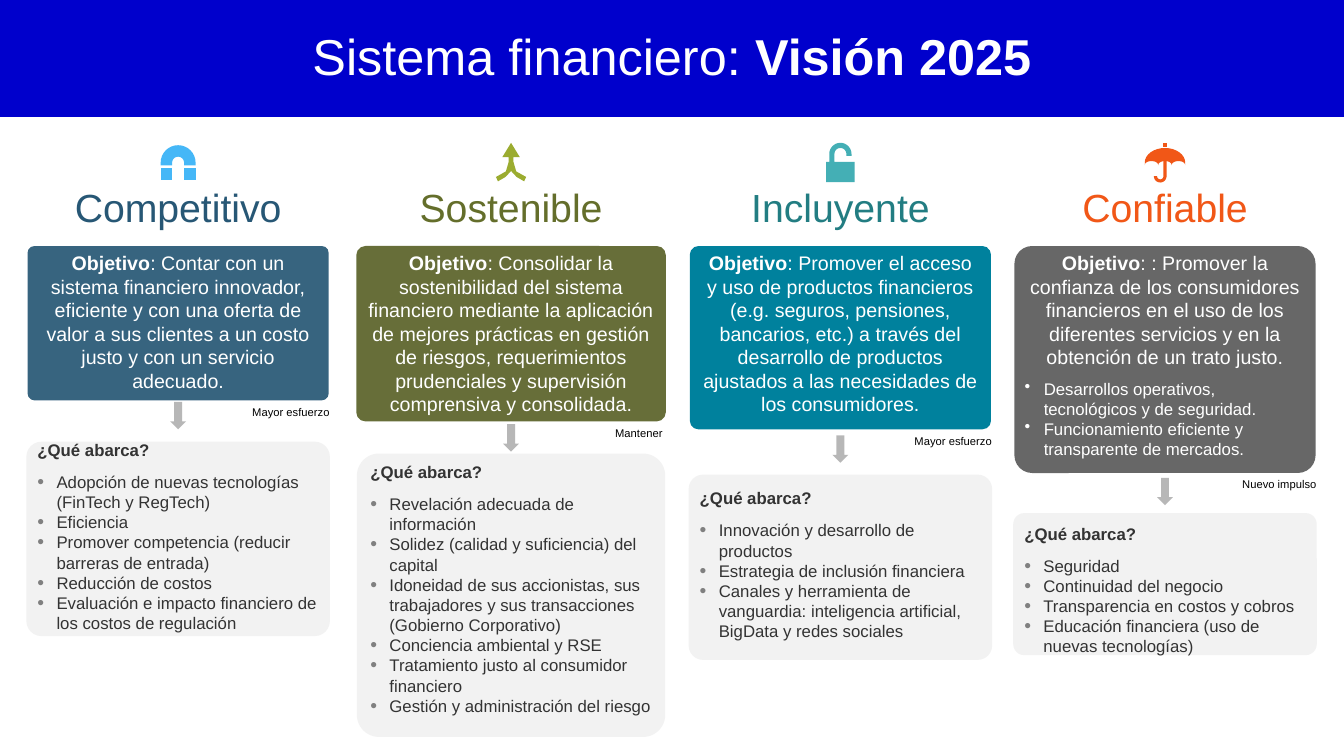
"""Build the slide on the 2025 vision of the financial system."""
from dataclasses import dataclass
from math import cos, radians, sin

from lxml.etree import SubElement
from pptx import Presentation
from pptx.dml.color import RGBColor
from pptx.enum.shapes import MSO_SHAPE as Shape
from pptx.enum.text import MSO_ANCHOR as Anchor, MSO_AUTO_SIZE as AutoSize, PP_ALIGN as Align
from pptx.oxml.ns import qn
from pptx.util import Cm, Pt


@dataclass(frozen=True)
class Theme:
    font: str = "Arial"
    band: str = "0000CC"
    white: str = "FFFFFF"
    panel: str = "F2F2F2"
    arrow: str = "A6A6A6"
    body: str = "333333"
    bullet: str = "808080"
    effort: str = "000000"
    title_pt: int = 36
    heading_pt: int = 28
    goal_pt: int = 14
    list_pt: int = 12
    effort_pt: int = 8


@dataclass(frozen=True)
class Pillar:
    name: str
    center: float
    heading_color: str
    icon_color: str
    icon: list
    card_color: str
    card_opacity: int
    card_width: float
    card_height: float
    card_corner: float
    goal_width: float
    goal: str
    goal_items: list
    arrow_top: float
    effort: str
    panel_top: float
    panel_width: float
    panel_height: float
    list_top: float
    items: list


T = Theme()
CARD_TOP, ICON_TOP = 6.2, 3.6


def arc(cx, cy, rx, ry, start, end, steps=16):
    turn = (end - start) / steps
    angles = [radians(start + turn * i) for i in range(steps + 1)]
    return [(cx + rx * cos(a), cy + ry * sin(a)) for a in angles]


def box(left, top, right, bottom):
    return [(left, top), (right, top), (right, bottom), (left, bottom)]


MAGNET = [
    arc(0, .5, .44, .44, 180, 360) + [(.44, .57), (.15, .57)]
    + arc(0, .5, .15, .15, 360, 180) + [(-.15, .57), (-.44, .57)],
    box(-.44, .64, -.15, .94),
    box(.15, .64, .44, .94),
]
MERGE_RIGHT = [(0, 0), (.22, .36), (.06, .36), (.06, .48), (.13, .72), (.38, .86),
               (.33, .97), (.14, .86), (0, .71)]
MERGE = [MERGE_RIGHT + [(-x, y) for x, y in MERGE_RIGHT[-2:0:-1]]]
PADLOCK = [
    [(.36, .48), (.36, .99), (-.36, .99), (-.36, .48), (-.28, .48)]
    + arc(0, .28, .28, .28, 180, 360) + [(.28, .33), (.15, .33)]
    + arc(0, .28, .15, .15, 360, 180) + [(-.15, .48)],
]
UMBRELLA = [
    arc(0, .5, .51, .37, 180, 360)
    + [point for x in (.34, 0, -.34) for point in arc(x, .56, .17, .1, 360, 180)],
    [(-.04, .46), (.04, .46)] + arc(-.12, .84, .16, .16, 0, 180)
    + arc(-.12, .84, .08, .08, 180, 0),
    box(-.04, 0, .04, .1),
]

PILLARS = [
    Pillar("Competitivo", 4.49, "275775", "45B7F7", MAGNET, "275775", 92, 7.59, 3.89, .045, 7.47,
           ": Contar con un sistema financiero innovador, eficiente y con una oferta de valor "
           "a sus clientes a un costo justo y con un servicio adecuado.", [],
           10.13, "Mayor esfuerzo", 11.13, 7.65, 4.9, 10.95,
           ["Adopción de nuevas tecnologías (FinTech y RegTech)", "Eficiencia",
            "Promover competencia (reducir barreras de entrada)", "Reducción de costos",
            "Evaluación e impacto financiero de los costos de regulación"]),
    Pillar("Sostenible", 12.88, "646E2B", "9BAC30", MERGE, "5C642A", 93, 7.8, 4.42, .052, 7.8,
           ": Consolidar la sostenibilidad del sistema financiero mediante la aplicación de "
           "mejores prácticas en gestión de riesgos, requerimientos prudenciales y "
           "supervisión comprensiva y consolidada.", [],
           10.69, "Mantener", 11.43, 7.77, 7.14, 11.51,
           ["Revelación adecuada de información", "Solidez (calidad y suficiencia) del capital",
            "Idoneidad de sus accionistas, sus trabajadores y sus transacciones "
            "(Gobierno Corporativo)", "Conciencia ambiental y RSE",
            "Tratamiento justo al consumidor financiero",
            "Gestión y administración del riesgo"]),
    Pillar("Incluyente", 21.18, "227D82", "44AFB5", PADLOCK, "00819D", 100, 7.59, 4.62, .047, 7.49,
           ": Promover el acceso y uso de productos financieros (e.g. seguros, pensiones, "
           "bancarios, etc.) a través del desarrollo de productos ajustados a las "
           "necesidades de los consumidores.", [],
           10.97, "Mayor esfuerzo", 11.96, 7.65, 4.67, 12.17,
           ["Innovación y desarrollo de productos", "Estrategia de inclusión financiera",
            "Canales y herramienta de vanguardia: inteligencia artificial, BigData y "
            "redes sociales"]),
    Pillar("Confiable", 29.36, "F15717", "F15717", UMBRELLA, "595959", 91, 7.59, 5.72, .078, 7.57,
           ": : Promover la confianza de los consumidores financieros en el uso de los "
           "diferentes servicios y en la obtención de un trato justo.",
           ["Desarrollos operativos, tecnológicos y de seguridad.",
            "Funcionamiento eficiente y transparente de mercados."],
           12.04, "Nuevo impulso", 12.93, 7.65, 3.58, 13.06,
           ["Seguridad", "Continuidad del negocio", "Transparencia en costos y cobros",
            "Educación financiera (uso de nuevas tecnologías)"]),
]


def paint(sp, color, opacity=100):
    sp.shadow.inherit = False
    sp.line.fill.background()
    sp.fill.solid()
    sp.fill.fore_color.rgb = RGBColor.from_string(color)
    if opacity < 100:
        clr = sp.element.spPr.find(qn("a:solidFill"))[0]
        SubElement(clr, qn("a:alpha"), val=str(opacity * 1000))


def add_block(s, kind, left, top, width, height, color, opacity=100, corner=None):
    sp = s.shapes.add_shape(kind, Cm(left), Cm(top), Cm(width), Cm(height))
    paint(sp, color, opacity)
    if corner:
        sp.adjustments[0] = corner


def add_icon(s, outlines, center, color):
    for outline in outlines:
        points = [(Cm(center + x), Cm(ICON_TOP + y)) for x, y in outline]
        builder = s.shapes.build_freeform(*points[0], scale=1.0)
        builder.add_line_segments(points[1:], close=True)
        paint(builder.convert_to_shape(), color)


def style(p, size, color, align=Align.LEFT, bold=False, before=0):
    p.alignment = align
    p.space_before = Pt(before)
    for r in p.runs:
        r.font.name, r.font.size, r.font.bold = T.font, Pt(size), bold
        r.font.color.rgb = RGBColor.from_string(color)


def set_bullet(p, color=None):
    pPr = p._p.get_or_add_pPr()
    pPr.set("marL", str(Cm(.48)))
    pPr.set("indent", str(-Cm(.48)))
    if color:
        SubElement(SubElement(pPr, qn("a:buClr")), qn("a:srgbClr"), val=color)
        SubElement(pPr, qn("a:buSzPct"), val="115000")
    SubElement(pPr, qn("a:buChar"), char="•")


def add_items(tf, items, color, before, bullet_color=None):
    for i, item in enumerate(items):
        p = tf.add_paragraph()
        p.text = item
        set_bullet(p, bullet_color)
        style(p, T.list_pt, color, before=0 if i else before)


def place(s, sp, left, top, width, height, anchor):
    """Move a placeholder to its position, in front of what is already drawn."""
    s.shapes.element.append(sp.element)
    sp.left, sp.top, sp.width, sp.height = Cm(left), Cm(top), Cm(width), Cm(height)
    tf = sp.text_frame
    tf.word_wrap, tf.auto_size, tf.vertical_anchor = True, AutoSize.NONE, anchor
    return tf


def add_text(s, text, left, top, width, height, size, color, align, anchor=Anchor.MIDDLE):
    tf = s.shapes.add_textbox(Cm(left), Cm(top), Cm(width), Cm(height)).text_frame
    tf.word_wrap, tf.vertical_anchor = True, anchor
    tf.text = text
    style(tf.paragraphs[0], size, color, align)
    return tf


def add_title(s):
    add_block(s, Shape.RECTANGLE, 0, 0, 33.87, 2.95, T.band)
    tf = place(s, s.shapes.title, 0, .3, 33.87, 2.21, Anchor.MIDDLE)
    p = tf.paragraphs[0]
    p.text = "Sistema financiero: "
    p.add_run().text = "Visión 2025"
    style(p, T.title_pt, T.white, Align.CENTER)
    p.runs[1].font.bold = True


def add_goal(s, pillar):
    add_block(s, Shape.ROUNDED_RECTANGLE, pillar.center - pillar.card_width / 2, CARD_TOP,
              pillar.card_width, pillar.card_height, pillar.card_color, pillar.card_opacity,
              pillar.card_corner)
    tf = add_text(s, "Objetivo", pillar.center - pillar.goal_width / 2, CARD_TOP,
                  pillar.goal_width, 2.84, T.goal_pt, T.white, Align.CENTER, Anchor.TOP)
    p = tf.paragraphs[0]
    p.add_run().text = pillar.goal
    style(p, T.goal_pt, T.white, Align.CENTER)
    p.runs[0].font.bold = True
    add_items(tf, pillar.goal_items, T.white, 7)


def add_scope(s, pillar, sp):
    add_block(s, Shape.ROUNDED_RECTANGLE, pillar.center - pillar.panel_width / 2,
              pillar.panel_top, pillar.panel_width, pillar.panel_height, T.panel, corner=.078)
    tf = place(s, sp, pillar.center - 3.8, pillar.list_top, 7.65, pillar.panel_height, Anchor.TOP)
    tf.text = "¿Qué abarca?"
    p = tf.paragraphs[0]
    pPr = p._p.get_or_add_pPr()
    pPr.set("marL", "0")
    pPr.set("indent", "0")
    SubElement(pPr, qn("a:buNone"))
    style(p, T.list_pt, T.body, bold=True)
    add_items(tf, pillar.items, T.body, 8.5, T.bullet)


def add_pillar(s, pillar, sp):
    add_icon(s, pillar.icon, pillar.center, pillar.icon_color)
    add_text(s, pillar.name, pillar.center - 3.9, 4.04, 7.8, 2.34, T.heading_pt,
             pillar.heading_color, Align.CENTER)
    add_goal(s, pillar)
    add_block(s, Shape.DOWN_ARROW, pillar.center - .2, pillar.arrow_top, .4, .69, T.arrow, 80)
    add_text(s, pillar.effort, pillar.center + .97, CARD_TOP + pillar.card_height, 3.1, .58,
             T.effort_pt, T.effort, Align.RIGHT)
    add_scope(s, pillar, sp)


def main():
    prs = Presentation()
    prs.slide_width, prs.slide_height = Cm(33.87), Cm(19.05)
    s = prs.slides.add_slide(prs.slide_layouts.get_by_name("Comparison"))
    add_title(s)
    for idx, pillar in enumerate(PILLARS, 1):
        add_pillar(s, pillar, s.placeholders[idx])
    prs.save("out.pptx")


if __name__ == "__main__":
    main()
